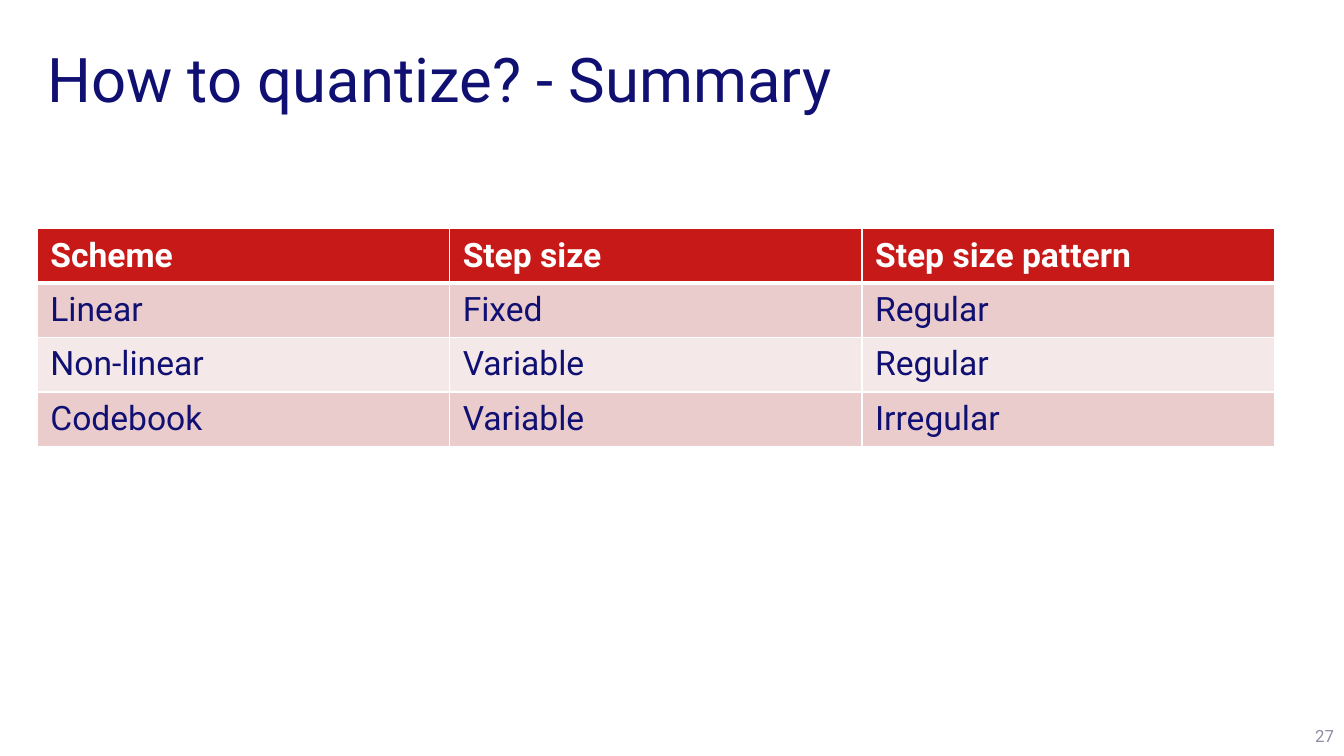
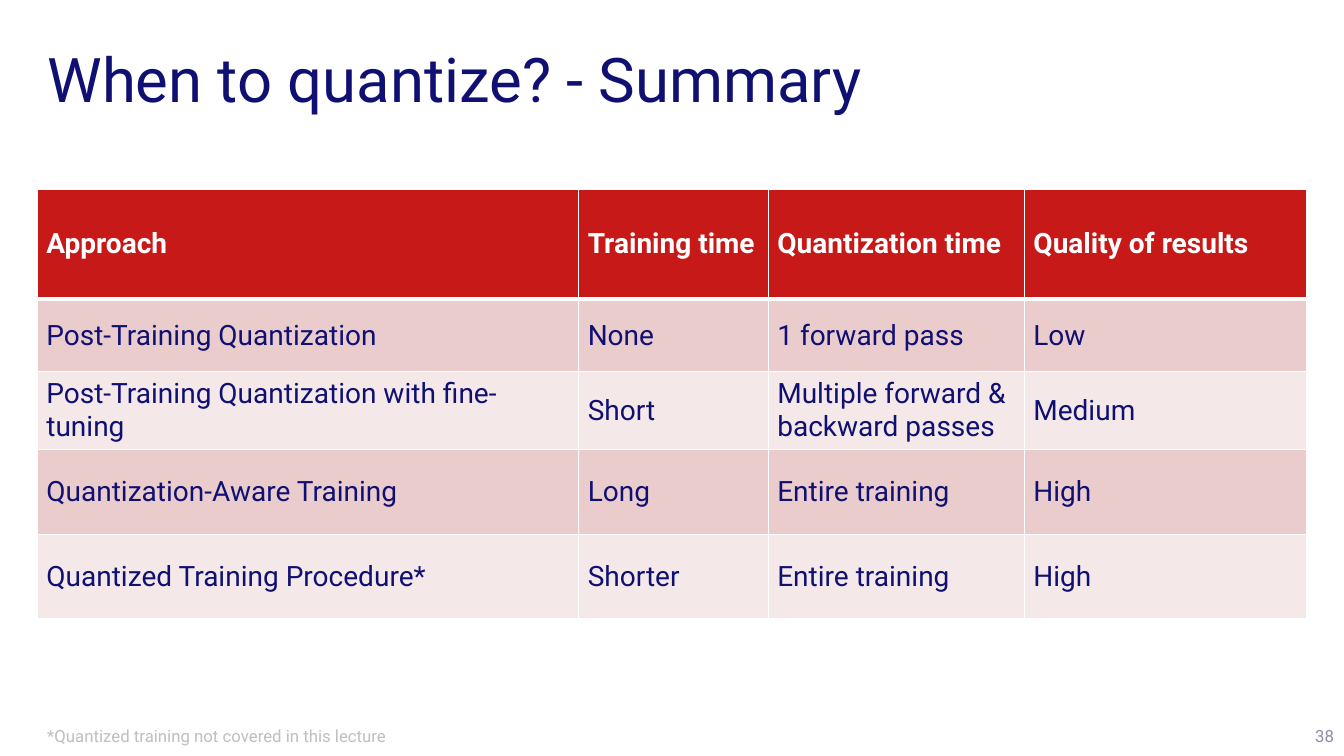
from lxml import etree
from pptx import Presentation
from pptx.dml.color import RGBColor
from pptx.enum.text import MSO_ANCHOR, MSO_AUTO_SIZE, PP_ALIGN
from pptx.oxml.ns import qn
from pptx.util import Inches, Pt

TOP, MIDDLE = MSO_ANCHOR.TOP, MSO_ANCHOR.MIDDLE
LEFT, RIGHT = PP_ALIGN.LEFT, PP_ALIGN.RIGHT
NO_AUTOFIT = MSO_AUTO_SIZE.NONE
TITLE_ONLY = 5

FONT = "Roboto"
NAVY, RED, WHITE = "101073", "C81919", "FFFFFF"
NUMBER_GREY, NOTE_GREY = "8C8CA6", "BFBFBF"
BANDS = ("EBCCCC", "F5E8E8")
MARGIN = 0.37
TITLE_BOX = (MARGIN, 0.4, 12.6, 0.83)
NOTE_BOX = (MARGIN, 7.1, 12.28, 0.4)
NUMBER_BOX = (12.65, 7.1, 0.68, 0.4)

SLIDES = [
    {
        "title": "How to quantize? - Summary",
        "number": "27",
        "note": None,
        "table": {
            "top": 2.27, "size": 24, "anchor": TOP, "insets": (0.13, 0.07),
            "cols": [4.09] * 3,
            "heights": [0.54] * 4,
            "rows": [
                ("Scheme", "Step size", "Step size pattern"),
                ("Linear", "Fixed", "Regular"),
                ("Non-linear", "Variable", "Regular"),
                ("Codebook", "Variable", "Irregular"),
            ],
        },
    },
    {
        "title": "When to quantize? - Summary",
        "number": "38",
        "note": "*Quantized training not covered in this lecture",
        "table": {
            "top": 1.88, "size": 20, "anchor": MIDDLE, "insets": (0.09, 0.05),
            "cols": [5.37, 1.88, 2.54, 2.8],
            "heights": [1.09, 0.72, 0.77, 0.84, 0.84],
            "rows": [
                ("Approach", "Training time", "Quantization time", "Quality of results"),
                ("Post-Training Quantization", "None", "1 forward pass", "Low"),
                ("Post-Training Quantization with fine-tuning", "Short",
                 "Multiple forward & backward passes", "Medium"),
                ("Quantization-Aware Training", "Long", "Entire training", "High"),
                ("Quantized Training Procedure*", "Shorter", "Entire training", "High"),
            ],
        },
    },
]


def color(value):
    return RGBColor.from_string(value)


def write(tf, text, size, ink, bold=False, align=LEFT):
    p = tf.paragraphs[0]
    p.alignment = align
    r = p.add_run()
    r.text = text
    r.font.name = FONT
    r.font.size = Pt(size)
    r.font.bold = bold
    r.font.color.rgb = color(ink)
    return p


def add_title(s, text):
    sp = s.shapes.title
    sp.left, sp.top, sp.width, sp.height = map(Inches, TITLE_BOX)
    tf = sp.text_frame
    tf.auto_size = NO_AUTOFIT
    tf.word_wrap = True
    tf.vertical_anchor = MIDDLE
    write(tf, text, 44, NAVY).line_spacing = 0.9


def add_footer(s, text, box, ink, align):
    tf = s.shapes.add_textbox(*map(Inches, box)).text_frame
    tf.word_wrap = True
    tf.vertical_anchor = MIDDLE
    write(tf, text, 12, ink, align=align)


def set_borders(cell, top, bottom):
    tc_pr = cell._tc.get_or_add_tcPr()
    widths = {"a:lnL": 1, "a:lnR": 1, "a:lnT": top, "a:lnB": bottom}
    for position, (tag, width) in enumerate(widths.items()):
        line = etree.Element(qn(tag), w=str(Pt(width)))
        fill = etree.SubElement(line, qn("a:solidFill"))
        etree.SubElement(fill, qn("a:srgbClr"), val=WHITE)
        tc_pr.insert(position, line)


def add_table(s, spec_table):
    cols, heights, rows = (spec_table[key] for key in ("cols", "heights", "rows"))
    frame = s.shapes.add_table(
        len(rows), len(cols), Inches(MARGIN), Inches(spec_table["top"]),
        Inches(sum(cols)), Inches(sum(heights)))
    table = frame.table
    for column, width in zip(table.columns, cols):
        column.width = Inches(width)
    side, edge = map(Inches, spec_table["insets"])
    for i, (row, height, texts) in enumerate(zip(table.rows, heights, rows)):
        row.height = Inches(height)
        header = i == 0
        for cell, text in zip(row.cells, texts):
            cell.margin_left = cell.margin_right = side
            cell.margin_top = cell.margin_bottom = edge
            cell.vertical_anchor = spec_table["anchor"]
            cell.fill.solid()
            cell.fill.fore_color.rgb = color(RED if header else BANDS[(i - 1) % 2])
            set_borders(cell, 3 if i == 1 else 1, 3 if header else 1)
            write(cell.text_frame, text, spec_table["size"],
                  WHITE if header else NAVY, bold=header)


def main():
    prs = Presentation()
    prs.slide_width, prs.slide_height = Inches(13.33), Inches(7.5)
    for content in SLIDES:
        s = prs.slides.add_slide(prs.slide_layouts[TITLE_ONLY])
        add_title(s, content["title"])
        add_footer(s, content["number"], NUMBER_BOX, NUMBER_GREY, RIGHT)
        add_table(s, content["table"])
        if content["note"]:
            add_footer(s, content["note"], NOTE_BOX, NOTE_GREY, LEFT)
    prs.save("out.pptx")


if __name__ == "__main__":
    main()
